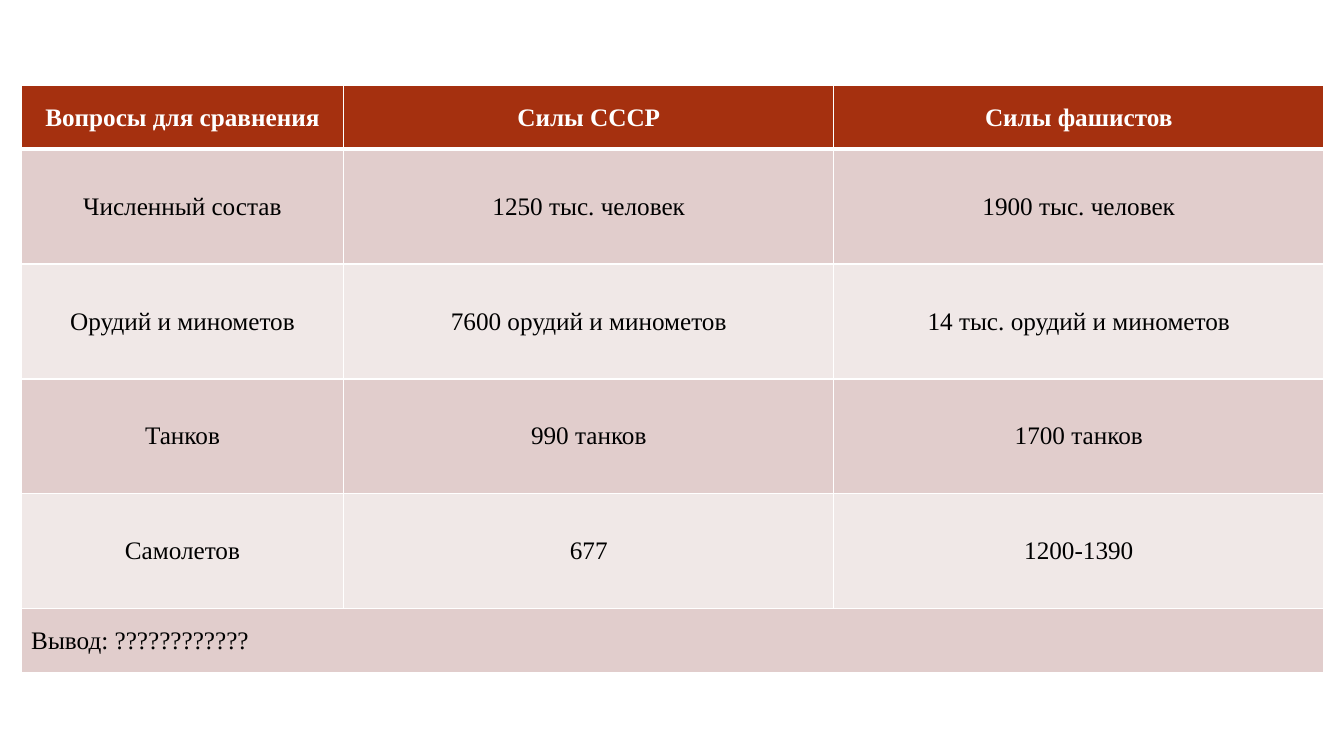
from dataclasses import dataclass

from lxml.etree import SubElement as Sub
from pptx import Presentation
from pptx.dml.color import RGBColor as Rgb
from pptx.enum.text import MSO_ANCHOR as Anchor, PP_ALIGN as Align
from pptx.oxml.ns import qn
from pptx.table import _Cell as Cell
from pptx.util import Inches, Pt


@dataclass(frozen=True)
class Theme:
    font: str = "Times New Roman"
    size: int = 18
    head: str = "A5300F"
    dark: str = "E1CDCC"
    light: str = "F0E8E7"
    line: str = "FFFFFF"
    ink: str = "000000"
    thin: int = 1
    thick: int = 3


@dataclass(frozen=True)
class Row:
    texts: tuple[str, ...]
    high: float
    fill: str
    bold: bool = False


THEME = Theme()
LEFT, TOP = 0.21, 0.85
WIDTHS = (3.2, 4.86, 4.86)
LOW, TALL = 0.63, 1.14

ROWS = (
    Row(("Вопросы для сравнения", "Силы СССР", "Силы фашистов"), LOW, THEME.head, True),
    Row(("Численный состав", "1250 тыс. человек", "1900 тыс. человек"), TALL, THEME.dark),
    Row(("Орудий и минометов", "7600 орудий и минометов", "14 тыс. орудий и минометов"),
        TALL, THEME.light),
    Row(("Танков", "990 танков", "1700 танков"), TALL, THEME.dark),
    Row(("Самолетов", "677", "1200-1390"), TALL, THEME.light),
    Row(("Вывод: ????????????",), LOW, THEME.dark),
)


def edge(cell: Cell, top: int, base: int) -> None:
    """Draw the four borders; they must precede the fill."""
    props = cell._tc.get_or_add_tcPr()
    thin = THEME.thin
    for side, wide in (("L", thin), ("R", thin), ("T", top), ("B", base)):
        line = Sub(props, qn(f"a:ln{side}"), w=str(Pt(wide)))
        Sub(Sub(line, qn("a:solidFill")), qn("a:srgbClr"), val=THEME.line)


def write(cell: Cell, text: str, row: Row, align: Align) -> None:
    """Fill one cell and set its text."""
    cell.fill.solid()
    cell.fill.fore_color.rgb = Rgb.from_string(row.fill)
    cell.vertical_anchor = Anchor.MIDDLE
    cell.text = text
    para = cell.text_frame.paragraphs[0]
    para.alignment = align
    font = para.font
    font.name, font.size, font.bold = THEME.font, Pt(THEME.size), row.bold
    font.color.rgb = Rgb.from_string(THEME.line if row.bold else THEME.ink)


def main() -> None:
    deck = Presentation()
    deck.slide_width, deck.slide_height = Inches(13.33), Inches(7.5)
    slide = deck.slides.add_slide(deck.slide_layouts[6])

    # Table grid
    high = sum(row.high for row in ROWS)
    table = slide.shapes.add_table(
        len(ROWS), len(WIDTHS), Inches(LEFT), Inches(TOP),
        Inches(sum(WIDTHS)), Inches(high)).table
    for col, wide in zip(table.columns, WIDTHS):
        col.width = Inches(wide)

    # Rows, with a thick rule under the header
    for i, row in enumerate(ROWS):
        table.rows[i].height = Inches(row.high)
        whole = len(row.texts) == 1
        if whole:
            table.cell(i, 0).merge(table.cell(i, len(WIDTHS) - 1))
        for cell in table.rows[i].cells:
            edge(cell, THEME.thick if i == 1 else THEME.thin,
                 THEME.thick if i == 0 else THEME.thin)
        for j, text in enumerate(row.texts):
            write(table.cell(i, j), text, row, Align.LEFT if whole else Align.CENTER)

    deck.save("out.pptx")


if __name__ == "__main__":
    main()
